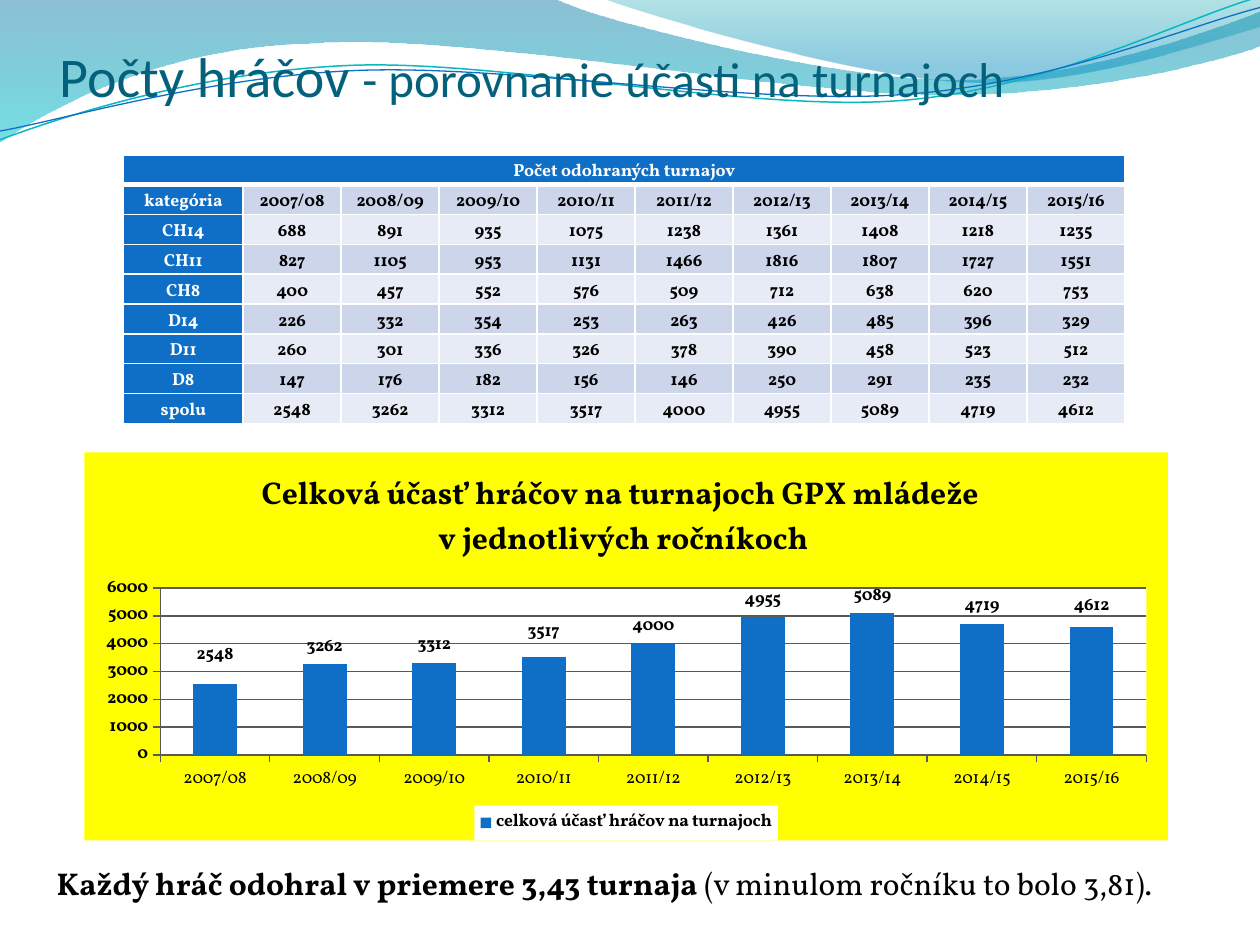
from lxml import etree
from pptx import Presentation
from pptx.chart.data import CategoryChartData
from pptx.dml.color import RGBColor
from pptx.enum.chart import XL_CHART_TYPE, XL_LABEL_POSITION, XL_LEGEND_POSITION, XL_TICK_MARK
from pptx.enum.text import MSO_ANCHOR, PP_ALIGN
from pptx.oxml.ns import qn
from pptx.util import Inches, Pt

COLUMN = XL_CHART_TYPE.COLUMN_CLUSTERED
OUTSIDE_END = XL_LABEL_POSITION.OUTSIDE_END
LEGEND_BOTTOM = XL_LEGEND_POSITION.BOTTOM
TICK_OUT = XL_TICK_MARK.OUTSIDE
MIDDLE, BOTTOM = MSO_ANCHOR.MIDDLE, MSO_ANCHOR.BOTTOM
CENTER = PP_ALIGN.CENTER

BLUE = RGBColor(0x0F, 0x6F, 0xC6)
TEAL = RGBColor(0x0A, 0xB8, 0xBF)
TITLE = RGBColor(0x04, 0x61, 0x7B)
WAVE_TOP = RGBColor(0x00, 0x74, 0xA1)
WAVE_BOTTOM = RGBColor(0x00, 0xC6, 0xCF)
CREST_TOP = RGBColor(0x00, 0xA1, 0xA9)
CREST_BOTTOM = RGBColor(0x00, 0x8B, 0xBF)
BAND_DARK = RGBColor(0xCC, 0xD5, 0xEA)
BAND_LIGHT = RGBColor(0xE7, 0xEB, 0xF5)
YELLOW = RGBColor(0xFF, 0xFF, 0x00)
GRAY = RGBColor(0x59, 0x59, 0x59)
WHITE = RGBColor(0xFF, 0xFF, 0xFF)
BLACK = RGBColor(0x00, 0x00, 0x00)

SEASONS = ["2007/08", "2008/09", "2009/10", "2010/11", "2011/12", "2012/13", "2013/14", "2014/15", "2015/16"]
TOTALS = [2548, 3262, 3312, 3517, 4000, 4955, 5089, 4719, 4612]
ROWS = [
    ["kategória"] + SEASONS,
    ["CH14", 688, 891, 935, 1075, 1238, 1361, 1408, 1218, 1235],
    ["CH11", 827, 1105, 953, 1131, 1466, 1816, 1807, 1727, 1551],
    ["CH8", 400, 457, 552, 576, 509, 712, 638, 620, 753],
    ["D14", 226, 332, 354, 253, 263, 426, 485, 396, 329],
    ["D11", 260, 301, 336, 326, 378, 390, 458, 523, 512],
    ["D8", 147, 176, 182, 156, 146, 250, 291, 235, 232],
    ["spolu"] + TOTALS,
]


def add_text(p, text, size=10, color=BLACK, bold=True, font="Vollkorn"):
    r = p.add_run()
    r.text = text
    r.font.size = Pt(size)
    r.font.color.rgb = color
    r.font.bold = bold
    r.font.name = font


def add_curve(start, segments, closed):
    ends = [(Inches(seg[-2]), Inches(seg[-1])) for seg in [start] + segments]
    builder = s.shapes.build_freeform(*ends[0])
    builder.add_line_segments(ends[1:], close=closed)
    sp = builder.convert_to_shape()
    sp.shadow.inherit = False
    for line, seg in zip(list(sp.element.iter(qn("a:lnTo"))), segments):
        if len(seg) == 6:
            curve = etree.Element(qn("a:cubicBezTo"))
            for x, y in zip(seg[::2], seg[1::2]):
                etree.SubElement(curve, qn("a:pt"), x=str(Inches(x) - sp.left), y=str(Inches(y) - sp.top))
            line.getparent().replace(line, curve)
    return sp


prs = Presentation()
prs.slide_width, prs.slide_height = Inches(10), Inches(7.5)
s = prs.slides.add_slide(prs.slide_layouts[6])

WAVES = [
    ((0, 0), [(4.4, -0.01), (4.76, 0.17, 6.64, 0.63, 7.58, 0.63), (8.53, 0.63, 9.58, 0.26, 10, 0.09),
              (10.01, 0.36), (9.83, 0.44, 8.7, 0.76, 7.46, 0.75), (6.22, 0.75, 3.82, 0.28, 2.57, 0.34),
              (1.29, 0.36, 0.46, 0.83, -0.01, 1.13)],
     [(0, WAVE_TOP, 45), (1, WAVE_BOTTOM, 55)]),
    ((4.79, -0.01), [(5.09, 0.11, 6.82, 0.62, 7.69, 0.65), (8.56, 0.69, 9.61, 0.32, 10, 0.21), (10, 0)],
     [(0, CREST_TOP, 30), (0.8, CREST_BOTTOM, 45)]),
]
for start, segments, stops in WAVES:
    sp = add_curve(start, segments, True)
    sp.line.fill.background()
    sp.fill.gradient()
    sp.fill.gradient_angle = 270
    for stop, (position, color, _) in zip(sp.fill.gradient_stops, stops):
        stop.position = position
        stop.color.rgb = color
    for clr, (_, _, opacity) in zip(sp.element.spPr.iter(qn("a:srgbClr")), stops):
        etree.SubElement(clr, qn("a:alpha"), val=str(opacity * 1000))

STRANDS = [
    ((0, 1.11), [(0.48, 0.93, 1.58, 0.57, 2.77, 0.52), (3.95, 0.47, 5.93, 0.89, 7.13, 0.8),
                 (8.33, 0.71, 9.38, 0.15, 9.98, -0.02)], TEAL, 0.85),
    ((0, 1.04), [(0.47, 0.96, 1.64, 0.61, 2.83, 0.56), (4.03, 0.51, 5.97, 0.84, 7.17, 0.75),
                 (8.36, 0.67, 9.41, 0.21, 10, 0.06)], BLUE, 0.75),
]
for start, segments, color, width in STRANDS:
    sp = add_curve(start, segments, False)
    sp.fill.background()
    sp.line.color.rgb = color
    sp.line.width = Pt(width)

tf = s.shapes.add_textbox(Inches(0.47), Inches(0.23), Inches(9), Inches(0.63)).text_frame
tf.word_wrap = True
tf.vertical_anchor = BOTTOM
tf.margin_left = tf.margin_right = tf.margin_bottom = 0
add_text(tf.paragraphs[0], "Počty hráčov ", size=32, color=TITLE, bold=False, font="Calibri")
add_text(tf.paragraphs[0], "- porovnanie účasti na turnajoch", size=28, color=TITLE, bold=False, font="Calibri")

tf = s.shapes.add_textbox(Inches(0.35), Inches(6.81), Inches(9.01), Inches(0.4)).text_frame
tf.word_wrap = False
add_text(tf.paragraphs[0], "Každý hráč odohral v priemere 3,43 turnaja ", size=18)
add_text(tf.paragraphs[0], "(v minulom ročníku to bolo 3,81).", size=18, bold=False)

table = s.shapes.add_table(9, 10, Inches(0.98), Inches(1.23), Inches(7.95), Inches(2.13)).table
for i, column in enumerate(table.columns):
    column.width = Inches(7 / 9 if i else 0.95)
table.cell(0, 0).merge(table.cell(0, 9))
for r, values in enumerate([["Počet odohraných turnajov"] + [""] * 9] + ROWS):
    for c, value in enumerate(values):
        cell = table.cell(r, c)
        cell.margin_left = cell.margin_right = Inches(0.05)
        cell.margin_top = cell.margin_bottom = 0
        cell.vertical_anchor = BOTTOM if r else MIDDLE
        header = r == 0 or c == 0
        p = cell.text_frame.paragraphs[0]
        p.alignment = CENTER
        p.line_spacing = 1.15
        if value != "":
            add_text(p, str(value), color=WHITE if header else BLACK)
        tcPr = cell._tc.get_or_add_tcPr()
        for side in "LRTB":
            thick = (r, side) in [(0, "B"), (1, "T")]
            ln = etree.SubElement(tcPr, qn("a:ln" + side), w=str(Pt(3 if thick else 1)))
            etree.SubElement(etree.SubElement(ln, qn("a:solidFill")), qn("a:srgbClr"), val=str(WHITE))
        cell.fill.solid()
        cell.fill.fore_color.rgb = BLUE if header else BAND_DARK if r % 2 else BAND_LIGHT

data = CategoryChartData()
data.categories = SEASONS
data.add_series("celková účasť hráčov na turnajoch", TOTALS)
chart = s.shapes.add_chart(COLUMN, Inches(0.67), Inches(3.59), Inches(8.6), Inches(3.08), data).chart
chart.font.size = Pt(10)
chart.font.name = "Vollkorn"
chart.font.color.rgb = BLACK

tf = chart.chart_title.text_frame
add_text(tf.paragraphs[0], "Celková účasť hráčov na turnajoch GPX mládeže ", size=18)
add_text(tf.add_paragraph(), "v jednotlivých ročníkoch", size=18)

chart.has_legend = True
chart.legend.position = LEGEND_BOTTOM
chart.legend.include_in_layout = False
chart.legend.font.bold = True

for axis in (chart.category_axis, chart.value_axis):
    axis.major_tick_mark = TICK_OUT
    axis.format.line.color.rgb = GRAY
chart.value_axis.tick_labels.font.bold = True
chart.value_axis.minimum_scale = 0
chart.value_axis.maximum_scale = 6000
chart.value_axis.major_unit = 1000
chart.value_axis.major_gridlines.format.line.color.rgb = GRAY

plot = chart.plots[0]
plot.gap_width = 150
plot.vary_by_categories = False
series = plot.series[0]
series.format.fill.solid()
series.format.fill.fore_color.rgb = BLUE
labels = series.data_labels
labels.show_value = True
labels.position = OUTSIDE_END
labels.font.bold = True
for i in (0, 3, 8):
    label = series.points[i].data_label
    label.font.bold = True
    label.position = OUTSIDE_END

space = chart.element
for leader in space.iter(qn("c:showLeaderLines")):
    leader.set("val", "0")
area = space.find(".//" + qn("c:plotArea"))
legend = space.find(".//" + qn("c:legend"))
layouts = [
    (space.find(".//" + qn("c:title")), 1, {"xMode": "edge", "yMode": "edge", "x": 0.16, "y": 0.04}),
    (area, 0, {"layoutTarget": "inner", "xMode": "edge", "yMode": "edge", "x": 0.07, "y": 0.35, "w": 0.91, "h": 0.43}),
    (legend, 1, {"xMode": "edge", "yMode": "edge", "x": 0.36, "y": 0.91, "w": 0.28, "h": 0.09}),
]
for dLbl, shift in zip(space.iter(qn("c:dLbl")), (-0.03, -0.02, -0.01)):
    layouts.append((dLbl, 1, {"x": 0, "y": shift}))
for parent, index, values in layouts:
    for old in parent.findall(qn("c:layout")):
        parent.remove(old)
    layout = etree.Element(qn("c:layout"))
    manual = etree.SubElement(layout, qn("c:manualLayout"))
    for name, value in values.items():
        etree.SubElement(manual, qn("c:" + name), val=str(value))
    parent.insert(index, layout)

for previous, color in [(space.find(qn("c:chart")), YELLOW), (area[-1], WHITE), (legend.find(qn("c:overlay")), WHITE)]:
    spPr = etree.Element(qn("c:spPr"))
    etree.SubElement(etree.SubElement(spPr, qn("a:solidFill")), qn("a:srgbClr"), val=str(color))
    etree.SubElement(etree.SubElement(spPr, qn("a:ln")), qn("a:noFill"))
    previous.addnext(spPr)

prs.save("out.pptx")
